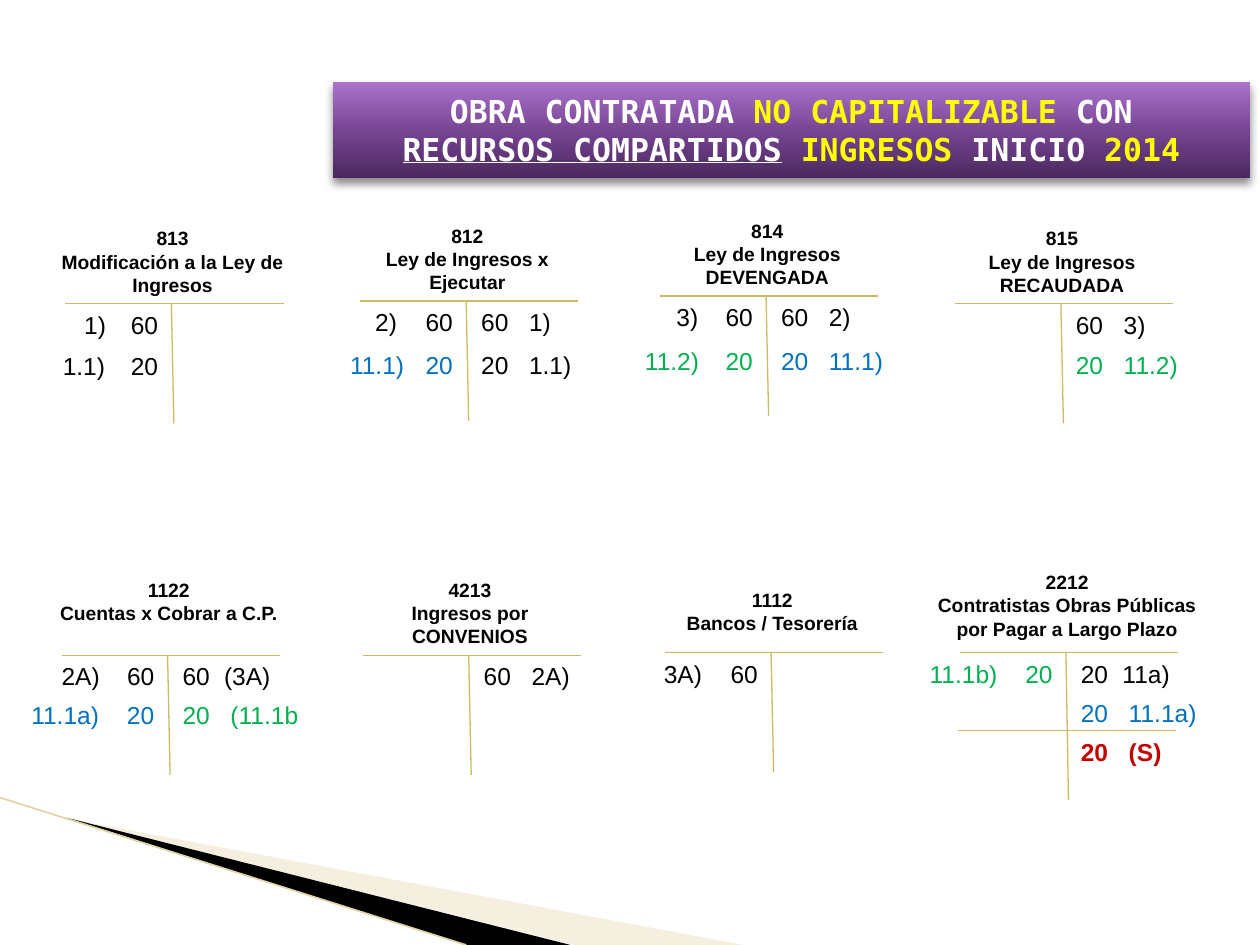
import pptx
import pptx.util
import pptx.dml.color
import pptx.enum.shapes
import pptx.enum.text
import pptx.oxml
import pptx.oxml.ns
from pptx.util import Inches

BLACK, BLUE, GREEN, RED = "000000", "0070C0", "00B050", "C00000"
GOLD, WHITE, YELLOW = "CEB966", "FFFFFF", "FFFF00"
NS = pptx.oxml.ns.nsdecls("a")

# Each account: stem x, bar y, stem height, row pitch, heading (top, width, lines),
# debits (text left, label, amount, colour, row), credits (amount, label, colour, gap)
ACCOUNTS = [
    (1.36, 2.41, 0.95, 0.33, (1.75, 2.01, ["813", "Modificación a la Ley de Ingresos"]),
     [(0.67, "1)", "60", BLACK), (0.5, "1.1)", "20", BLACK)], []),
    (3.7, 2.39, 0.95, 0.34, (1.73, 2.13, ["812", "Ley de Ingresos x Ejecutar"]),
     [(2.98, "2)", "60", BLACK), (2.78, "11.1)", "20", BLUE)],
     [("60", "1)", BLACK, 0.38), ("20", "1.1)", BLACK, 0.38)]),
    (6.08, 2.35, 0.95, 0.35, (1.69, 2.41, ["814", "Ley de Ingresos", "DEVENGADA"]),
     [(5.37, "3)", "60", BLACK), (5.12, "11.2)", "20", GREEN)],
     [("60", "2)", BLACK, 0.38), ("20", "11.1)", BLUE, 0.38)]),
    (8.42, 2.41, 0.95, 0.32, (1.75, 2.13, ["815", "Ley de Ingresos RECAUDADA"]),
     [], [("60", "3)", BLACK, 0.38), ("20", "11.2)", GREEN, 0.38)]),
    (1.33, 5.2, 0.95, 0.31, (4.54, 1.97, ["1122", "Cuentas x Cobrar a C.P."]),
     [(0.49, "2A)", "60", BLACK), (0.25, "11.1a)", "20", BLUE)],
     [("60", "(3A)", BLACK, 0.33), ("20", "(11.1b", GREEN, 0.38)]),
    (3.72, 5.2, 0.95, 0.31, (4.54, 2.05, ["4213", "Ingresos por CONVENIOS"]),
     [], [("60", "2A)", BLACK, 0.38)]),
    (6.12, 5.18, 0.95, 0.31, (4.62, 2.5, ["1112", "Bancos / Tesorería"]),
     [(5.27, "3A)", "60", BLACK)], []),
    (8.46, 5.18, 1.17, 0.31, (4.48, 2.5, ["2212", "Contratistas Obras Públicas por Pagar a Largo Plazo"]),
     [(7.38, "11.1b)", "20", GREEN)],
     [("20", "11a)", BLACK, 0.33), ("20", "11.1a)", BLUE, 0.38), ("20", "(S)", RED, 0.38)]),
]

TITLE_LINES = [
    [("OBRA CONTRATADA ", WHITE, False), ("NO CAPITALIZABLE ", YELLOW, False),
     ("CON", WHITE, False)],
    [("RECURSOS COMPARTIDOS", WHITE, True), (" INGRESOS ", YELLOW, False),
     ("INICIO", WHITE, False), (" 2014", YELLOW, False)],
]


def rgb(hex_color):
    return pptx.dml.color.RGBColor.from_string(hex_color)


def set_font(font, name, size, color=None, bold=None):
    font.name, font.size, font.bold = name, pptx.util.Pt(size), bold
    if color:
        font.color.rgb = rgb(color)


def add_line(shapes, x1, y1, x2, y2, color=GOLD, width=0.75):
    line = shapes.add_connector(pptx.enum.shapes.MSO_CONNECTOR.STRAIGHT,
                                Inches(x1), Inches(y1), Inches(x2), Inches(y2))
    line.line.color.rgb = rgb(color)
    line.line.width = pptx.util.Pt(width)
    line._element.spPr.append(pptx.oxml.parse_xml(f"<a:effectLst {NS}/>"))


def add_wedge(slide, points, color, opacity=100):
    (x, y), *others = [(Inches(px), Inches(py)) for px, py in points]
    builder = slide.shapes.build_freeform(x, y, scale=1.0)
    builder.add_line_segments(others, close=True)
    wedge = builder.convert_to_shape()
    wedge.shadow.inherit = False
    wedge.fill.solid()
    wedge.fill.fore_color.rgb = rgb(color)
    wedge.line.fill.background()
    if opacity < 100:
        tint = wedge._element.spPr.find(".//" + pptx.oxml.ns.qn("a:srgbClr"))
        tint.append(pptx.oxml.parse_xml(f'<a:alpha {NS} val="{opacity * 1000}"/>'))


def add_title(slide):
    title = slide.shapes.title
    title.left, title.top, title.width, title.height = map(Inches, (2.64, 0.65, 7.28, 0.76))
    stops = [(0, "4B295E"), (50, "784594"), (70, "8C58AA"), (100, "AD73CF")]
    gradient = "".join(f'<a:gs pos="{pos * 1000}"><a:srgbClr val="{color}"/></a:gs>'
                       for pos, color in stops)
    for xml in (
        f'<a:prstGeom {NS} prst="roundRect"><a:avLst/></a:prstGeom>',
        f'<a:gradFill {NS} rotWithShape="1"><a:gsLst>{gradient}</a:gsLst>'
        '<a:lin ang="16200000" scaled="0"/></a:gradFill>',
        f'<a:effectLst {NS}><a:outerShdw blurRad="63500" dist="38100" dir="5400000" '
        'rotWithShape="0"><a:srgbClr val="000000"><a:alpha val="45000"/></a:srgbClr>'
        '</a:outerShdw></a:effectLst>',
    ):
        title._element.spPr.append(pptx.oxml.parse_xml(xml))
    frame = title.text_frame
    frame.auto_size = pptx.enum.text.MSO_AUTO_SIZE.NONE
    frame.vertical_anchor = pptx.enum.text.MSO_ANCHOR.MIDDLE
    for i, pieces in enumerate(TITLE_LINES):
        line = frame.paragraphs[0] if i == 0 else frame.add_paragraph()
        line.alignment = pptx.enum.text.PP_ALIGN.CENTER
        set_font(line.font, "DejaVu Sans Mono", 18, bold=True)
        for text, color, underlined in pieces:
            run = line.add_run()
            run.text = text
            run.font.color.rgb = rgb(color)
            if underlined:
                run.font.underline = True


def add_text_frame(slide, left, top, width, height):
    frame = slide.shapes.add_textbox(Inches(left), Inches(top),
                                     Inches(width), Inches(height)).text_frame
    frame.word_wrap = True
    return frame


def add_heading(slide, center, top, width, lines):
    frame = add_text_frame(slide, center - width / 2, top, width, 0.66)
    for i, text in enumerate(lines):
        line = frame.paragraphs[0] if i == 0 else frame.add_paragraph()
        line.text = text
        line.alignment = pptx.enum.text.PP_ALIGN.CENTER
        set_font(line.font, "Arial", 11, BLACK, True)


def add_entry(slide, left, top, width, first, second, gap, color):
    """Two items on one line, the second one starting at a tab stop."""
    entry = add_text_frame(slide, left, top, width, 0.34).paragraphs[0]
    entry.text = f"{first}\t{second}"
    entry._p.get_or_add_pPr().append(pptx.oxml.parse_xml(
        f'<a:tabLst {NS}><a:tab pos="{Inches(gap)}" algn="l"/></a:tabLst>'))
    set_font(entry.font, "Arial", 14, color, color == RED or None)


def add_account(slide, stem, top, height, pitch, heading, debits, credits):
    t_lines = slide.shapes.add_group_shape().shapes
    add_line(t_lines, stem - 0.84, top, stem + 0.89, top)
    add_line(t_lines, stem, top, stem + 0.02, top + height)
    add_heading(slide, stem + 0.01, *heading)
    for row, (text_left, label, amount, color) in enumerate(debits):
        left = text_left - 0.1
        add_entry(slide, left, top + row * pitch, stem + 0.05 - left,
                  label, amount, stem - 0.32 - text_left, color)
    for row, (amount, label, color, gap) in enumerate(credits):
        add_entry(slide, stem + 0.02, top + row * pitch, 1.25, amount, label, gap, color)


def main():
    deck = pptx.Presentation()
    deck.slide_width, deck.slide_height = Inches(10), Inches(7.5)
    slide = deck.slides.add_slide(deck.slide_layouts[5])

    # Corner decoration
    add_wedge(slide, [(0.55, 6.5), (5.9, 7.5), (4.56, 7.5)], "E4D7AD", 40)
    add_wedge(slide, [(0.53, 6.49), (4.53, 7.5), (3.7, 7.5)], BLACK)
    add_line(slide.shapes, 0, 6.33, 3.7, 7.5, "E1D3A6", 0.95)

    add_title(slide)

    # T accounts
    for account in ACCOUNTS:
        add_account(slide, *account)

    # Balance line of account 2212
    add_line(slide.shapes, 7.6, 5.8, 9.33, 5.8)

    deck.save("out.pptx")


if __name__ == "__main__":
    main()
